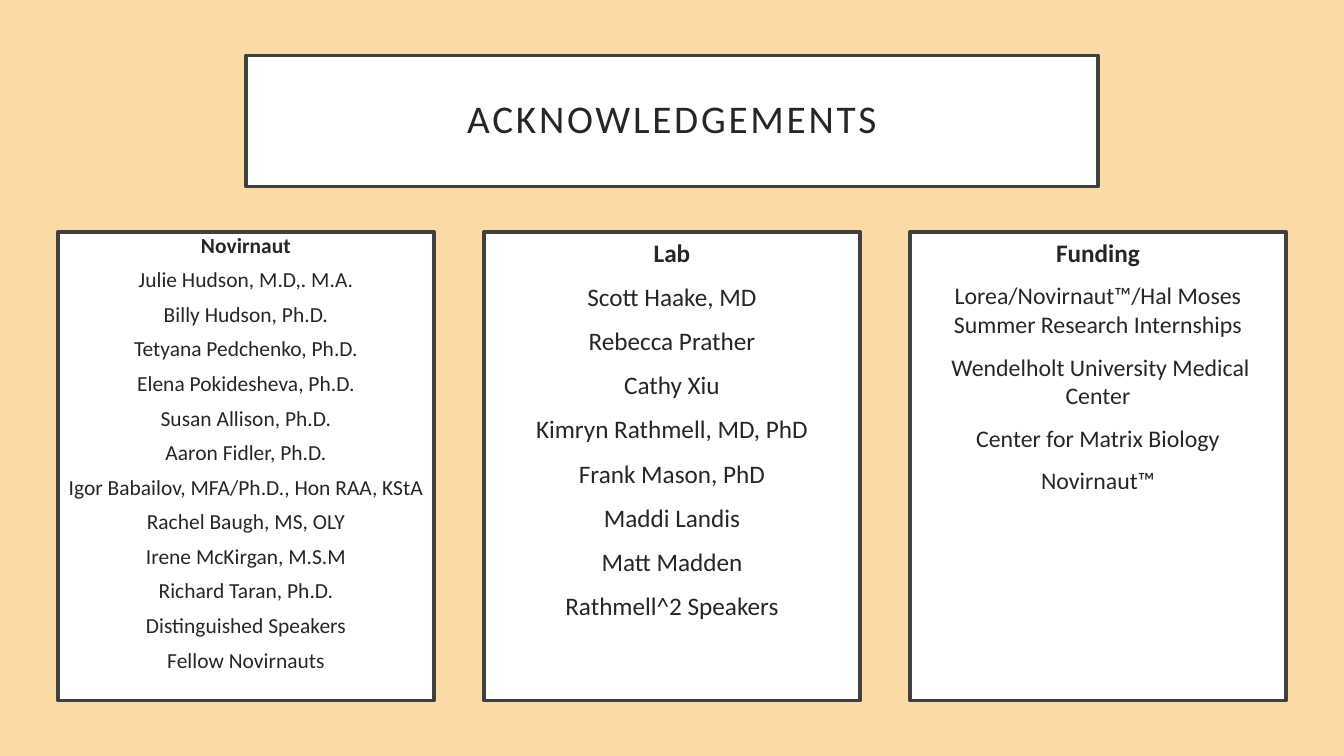
from pptx import Presentation
from pptx.dml.color import RGBColor
from pptx.enum.shapes import MSO_SHAPE as Shape
from pptx.enum.text import MSO_ANCHOR as Anchor, PP_ALIGN as Align
from pptx.util import Inches, Pt

WIDTH, HEIGHT = 13.33, 7.5
UNIT = 0.05  # side of one grid cell, in inches
COLS = WIDTH / UNIT

PANEL_W, PANEL_GAP = 74.6, 9.9
PANEL_TOP, PANEL_H = 46, 93
TITLE_W, TITLE_TOP, TITLE_H = 169, 11, 26

PANELS = [
    ("Novirnaut", [
        "Julie Hudson, M.D,. M.A.",
        "Billy Hudson, Ph.D.",
        "Tetyana Pedchenko, Ph.D.",
        "Elena Pokidesheva, Ph.D.",
        "Susan Allison, Ph.D.",
        "Aaron Fidler, Ph.D.",
        "Igor Babailov, MFA/Ph.D., Hon RAA, KStA",
        "Rachel Baugh, MS, OLY",
        "Irene McKirgan, M.S.M",
        "Richard Taran, Ph.D.",
        "Distinguished Speakers",
        "Fellow Novirnauts",
    ], dict(head_size=15.3, size=15.3, spacing=0.8)),
    ("Lab", [
        "Scott Haake, MD",
        "Rebecca Prather",
        "Cathy Xiu",
        "Kimryn Rathmell, MD, PhD",
        "Frank Mason, PhD",
        "Maddi Landis",
        "Matt Madden",
        "Rathmell^2 Speakers",
    ], dict(head_size=18, size=18)),
    ("Funding", [
        "Lorea/Novirnaut™/Hal Moses Summer Research Internships",
        " Wendelholt University Medical Center",
        "Center for Matrix Biology",
        "Novirnaut™",
    ], dict(head_size=18, size=17)),
]


def rgb(code):
    return RGBColor.from_string(code)


def add_text(p, text, size, bold=False, font="Calibri", color="262626",
             before=0, spacing=None, tracking=None):
    """Fill paragraph p with one centred run; tracking is in points."""
    p.alignment = Align.CENTER
    p.space_before = Pt(before)
    if spacing:
        p.line_spacing = spacing
    r = p.add_run()
    r.text = text
    r.font.name, r.font.size, r.font.bold = font, Pt(size), bold
    r.font.color.rgb = rgb(color)
    if tracking:
        r.font._element.set("spc", str(tracking * 100))


class Board:
    """Holds the slide and the look shared by its framed boxes."""
    back, paper, frame, frame_pt = "FBDAA5", "FFFFFF", "404040", 2.5

    def __init__(self, prs):
        self.s = prs.slides.add_slide(prs.slide_layouts[6])
        fill = self.s.background.fill
        fill.solid()
        fill.fore_color.rgb = rgb(self.back)

    def box(self, col, row, cols, rows, anchor=Anchor.TOP):
        """Add a framed box placed in grid cells and return its text frame."""
        sp = self.s.shapes.add_shape(
            Shape.RECTANGLE, *(Inches(n * UNIT) for n in (col, row, cols, rows)))
        sp.shadow.inherit = False
        sp.fill.solid()
        sp.fill.fore_color.rgb = rgb(self.paper)
        sp.line.color.rgb = rgb(self.frame)
        sp.line.width = Pt(self.frame_pt)
        tf = sp.text_frame
        tf.word_wrap = True
        tf.vertical_anchor = anchor
        return tf

    def title(self, text):
        tf = self.box((COLS - TITLE_W) / 2, TITLE_TOP, TITLE_W, TITLE_H, Anchor.MIDDLE)
        tf.margin_left = tf.margin_right = tf.margin_top = tf.margin_bottom = Inches(0.2)
        add_text(tf.paragraphs[0], text, 28, spacing=0.9, tracking=2)

    def panel(self, col, heading, names, head_size, size, spacing=None):
        tf = self.box(col, PANEL_TOP, PANEL_W, PANEL_H)
        add_text(tf.paragraphs[0], heading, head_size, bold=True, before=10, spacing=spacing)
        for name in names:
            add_text(tf.add_paragraph(), name, size, before=10, spacing=spacing)


def main():
    prs = Presentation()
    prs.slide_width, prs.slide_height = Inches(WIDTH), Inches(HEIGHT)
    board = Board(prs)
    board.title("ACKNOWLEDGEMENTS")
    pitch = PANEL_W + PANEL_GAP
    left = (COLS - len(PANELS) * pitch + PANEL_GAP) / 2
    for i, (heading, names, style) in enumerate(PANELS):
        board.panel(left + i * pitch, heading, names, **style)
    prs.save("out.pptx")


if __name__ == "__main__":
    main()
